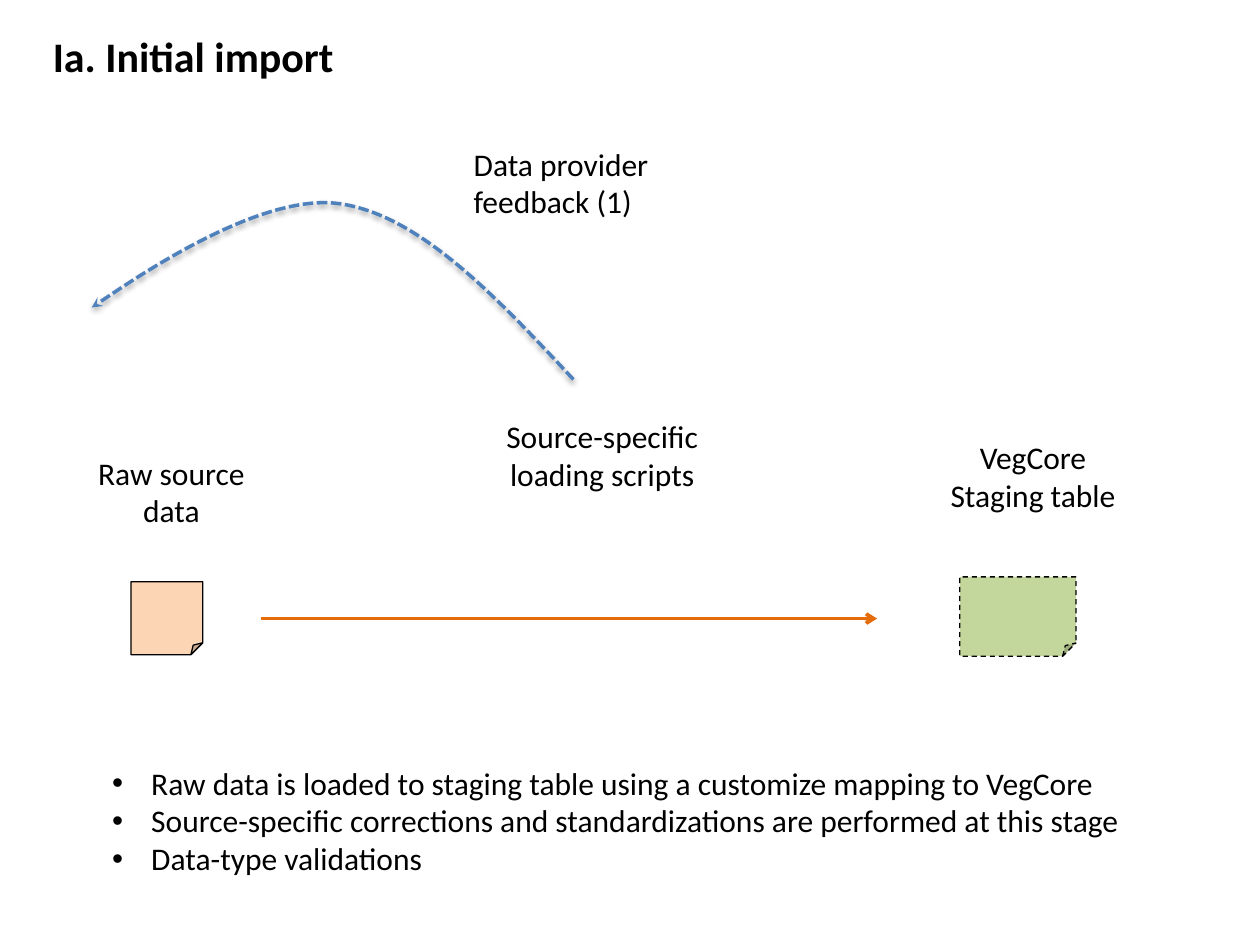
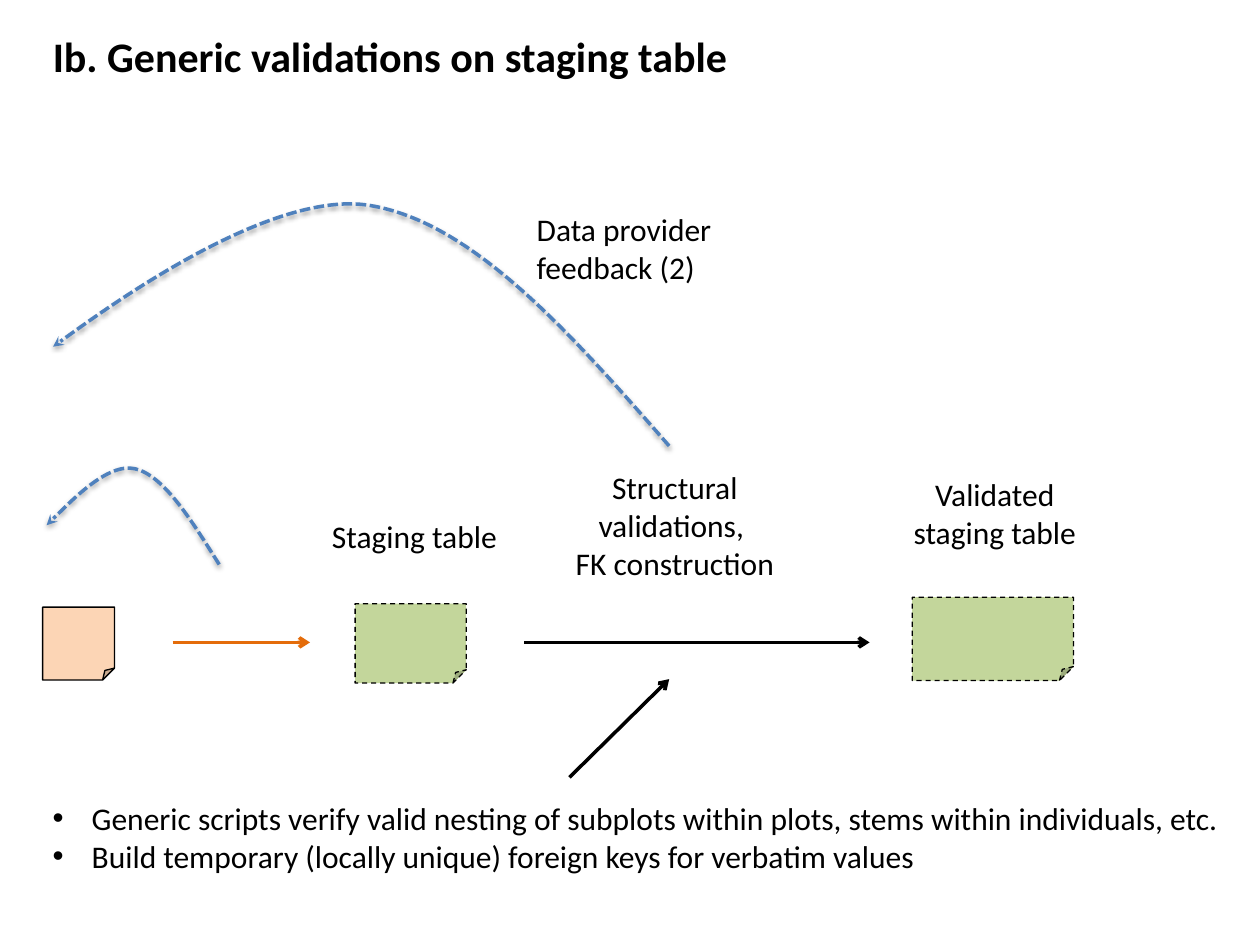
"""Build two slides on importing raw data and validating its staging table."""
from lxml import etree
from pptx import Presentation
from pptx import util as u
from pptx.dml.color import RGBColor
from pptx.enum import dml, shapes, text
from pptx.oxml import ns

BLACK = RGBColor(0x00, 0x00, 0x00)
PEACH = RGBColor(0xFC, 0xD5, 0xB5)
GREEN = RGBColor(0xC3, 0xD6, 0x9B)
ORANGE = RGBColor(0xE4, 0x6C, 0x0A)
BLUE = RGBColor(0x4F, 0x81, 0xBD)
FONT = "Calibri"
DASH = dml.MSO_LINE.DASH
LEFT, CENTER = text.PP_ALIGN.LEFT, text.PP_ALIGN.CENTER
TITLE_BOX = (0.81, 0.48, 23.24, 1.27)
NOTE_SIZE = (1.45, 1.47)

SLIDES = [
    {
        "title": "Ia. Initial import",
        "notes": [
            (2.64, 11.73, *NOTE_SIZE, PEACH, None),
            (19.35, 11.63, 2.34, 1.6, GREEN, DASH),
        ],
        "arrows": [(5.26, 12.47, 17.68, 12.47, ORANGE)],
        "feedback": [
            [(11.56, 7.65), (10.01, 5.99), (8.46, 4.34), (6.86, 4.11), (5.23, 3.86), (1.85, 6.2)],
        ],
        "labels": [
            (1.65, 9.02, 3.61, 1.8, "Raw source data", CENTER),
            (9.83, 8.28, 4.62, 1.8, "Source-specific loading scripts", CENTER),
            (18.59, 8.71, 4.47, 1.8, "VegCore\nStaging table", CENTER),
            (9.3, 2.79, 4.5, 1.8, "Data provider feedback (1)", LEFT),
        ],
        "bullet_box": (2.01, 15.27, 22.45, 2.57),
        "bullets": "Raw data is loaded to staging table using a customize mapping to VegCore\n"
                   "Source-specific corrections and standardizations are performed at this stage\n"
                   "Data-type validations",
    },
    {
        "title": "Ib. Generic validations on staging table",
        "notes": [
            (0.86, 12.24, *NOTE_SIZE, PEACH, None),
            (7.16, 12.17, 2.24, 1.6, GREEN, DASH),
            (18.39, 12.04, 3.25, 1.68, GREEN, DASH),
        ],
        "arrows": [
            (3.48, 12.95, 6.25, 12.95, ORANGE),
            (10.57, 12.95, 17.53, 12.95, BLACK),
            (11.48, 15.67, 13.49, 13.69, BLACK),
        ],
        "feedback": [
            [(13.49, 8.99), (11.51, 6.73), (9.53, 4.47), (7.44, 4.14), (5.38, 3.81), (1.07, 6.99)],
            [(4.42, 11.38), (3.86, 10.49), (3.3, 9.58), (2.72, 9.45), (2.16, 9.32), (0.94, 10.59)],
        ],
        "labels": [
            (6.12, 10.29, 4.47, 1.02, "Staging table", CENTER),
            (10.95, 9.32, 5.31, 2.57, "Structural validations, \nFK construction", CENTER),
            (18.01, 9.45, 4.09, 1.8, "Validated staging table", CENTER),
            (10.57, 4.11, 4.5, 1.8, "Data provider feedback (2)", LEFT),
        ],
        "bullet_box": (0.81, 15.98, 24.23, 1.8),
        "bullets": "Generic scripts verify valid nesting of subplots within plots, "
                   "stems within individuals, etc.\n"
                   "Build temporary (locally unique) foreign keys for verbatim values",
    },
]


def write_text(sp, words, size=18, bold=False, align=LEFT, bullet=False):
    tf = sp.text_frame
    tf.word_wrap = True
    tf.auto_size = text.MSO_AUTO_SIZE.SHAPE_TO_FIT_TEXT
    tf.vertical_anchor = text.MSO_ANCHOR.TOP
    tf.text = words
    for p in tf.paragraphs:
        p.alignment = align
        font = p.runs[0].font
        font.name, font.size, font.bold = FONT, u.Pt(size), bold
        font.color.rgb = BLACK
        if bullet:
            pr = p._p.get_or_add_pPr()
            pr.set("marL", str(u.Cm(0.79)))
            pr.set("indent", str(u.Cm(-0.79)))
            etree.SubElement(pr, ns.qn("a:buFont"), typeface="Arial")
            etree.SubElement(pr, ns.qn("a:buChar"), char="•")


def style_line(sp, color, width, dash=None, head=None):
    sp.line.color.rgb = color
    sp.line.width = u.Pt(width)
    if dash:
        sp.line.dash_style = dash
    if head:
        ln = sp._element.spPr.find(ns.qn("a:ln"))
        etree.SubElement(ln, ns.qn("a:tailEnd"), type=head)


prs = Presentation()
prs.slide_width, prs.slide_height = u.Cm(25.4), u.Cm(19.05)

for content in SLIDES:
    s = prs.slides.add_slide(prs.slide_layouts[5])
    title = s.shapes.title
    title.left, title.top, title.width, title.height = map(u.Cm, TITLE_BOX)
    write_text(title, content["title"], size=24, bold=True)

    for *box, fill, dash in content["notes"]:
        sp = s.shapes.add_shape(shapes.MSO_SHAPE.FOLDED_CORNER, *map(u.Cm, box))
        sp.shadow.inherit = False
        sp.fill.solid()
        sp.fill.fore_color.rgb = fill
        style_line(sp, BLACK, 0.75, dash)

    for *ends, color in content["arrows"]:
        cxn = s.shapes.add_connector(shapes.MSO_CONNECTOR.STRAIGHT, *map(u.Cm, ends))
        style_line(cxn, color, 2, head="arrow")
        etree.SubElement(cxn._element.spPr, ns.qn("a:effectLst"))

    for points in content["feedback"]:
        pts = [(u.Cm(x), u.Cm(y)) for x, y in points]
        start, c1, c2, peak, c3, end = pts
        builder = s.shapes.build_freeform(*start)
        builder.add_line_segments([peak, end], close=False)
        sp = builder.convert_to_shape()
        segments = list(sp._element.iter(ns.qn("a:lnTo")))
        for segment, curve in zip(segments, [(c1, c2, peak), (c3, end, end)]):
            bezier = etree.Element(ns.qn("a:cubicBezTo"))
            for x, y in curve:
                etree.SubElement(bezier, ns.qn("a:pt"), x=str(x - sp.left), y=str(y - sp.top))
            segment.getparent().replace(segment, bezier)
        sp.fill.background()
        style_line(sp, BLUE, 2, dml.MSO_LINE.SQUARE_DOT, "stealth")
        sp.shadow.inherit = False
        effects = sp._element.spPr.find(ns.qn("a:effectLst"))
        shadow = etree.SubElement(effects, ns.qn("a:outerShdw"), blurRad="40000",
                                  dist="20000", dir="5400000", rotWithShape="0")
        tint = etree.SubElement(shadow, ns.qn("a:srgbClr"), val=str(BLACK))
        etree.SubElement(tint, ns.qn("a:alpha"), val="38000")

    for *box, words, align in content["labels"]:
        write_text(s.shapes.add_textbox(*map(u.Cm, box)), words, align=align)

    bullet_box = s.shapes.add_textbox(*map(u.Cm, content["bullet_box"]))
    write_text(bullet_box, content["bullets"], bullet=True)

prs.save("out.pptx")
